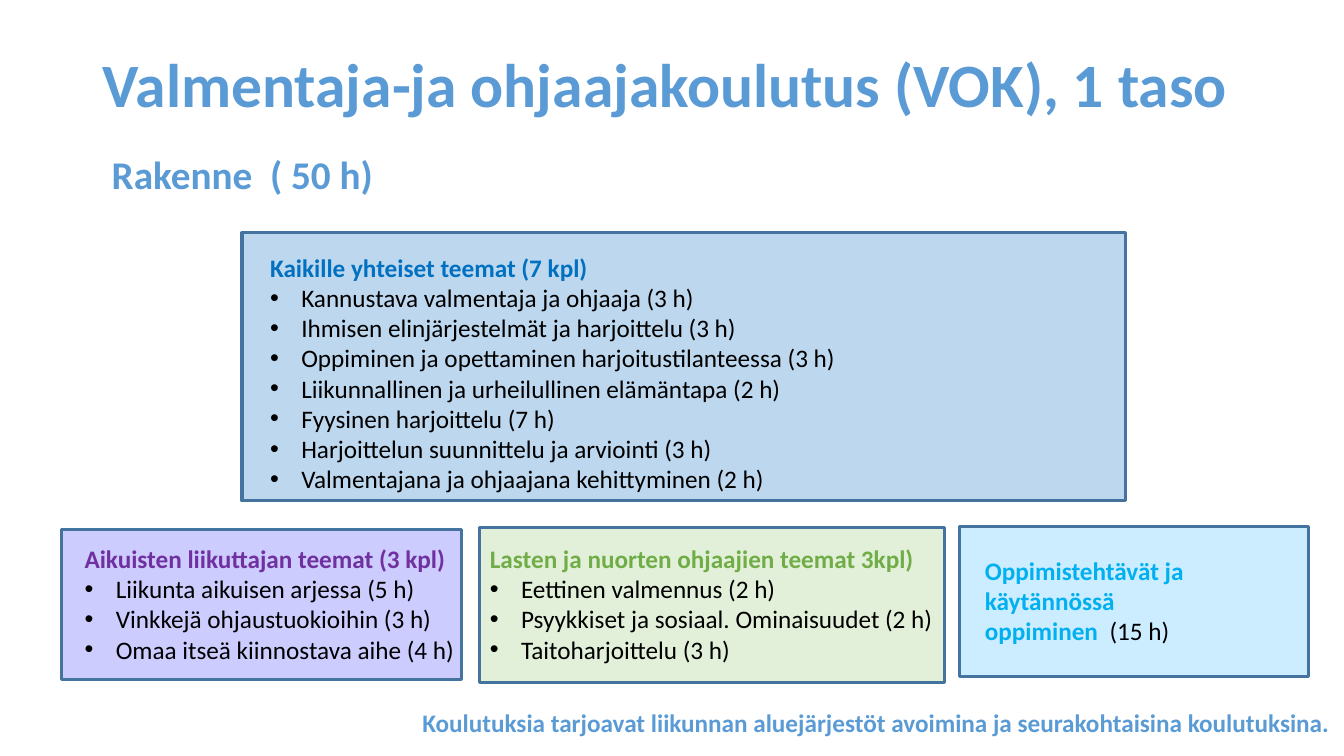
import pptx
import pptx.util
import pptx.dml.color
import pptx.enum.shapes
import pptx.enum.text
import lxml.etree

Inches = pptx.util.Inches
Pt = pptx.util.Pt

THEME = {
    "font": "Calibri",
    "title_size": 44,
    "subtitle_size": 28,
    "text_size": 18,
    "accent": "5B9BD5",
    "ink": "000000",
    "border": "43739E",
    "border_width": 2.25,
    "bullet_indent": 0.31,
}

HEADINGS = [
    {"text": "Valmentaja-ja ohjaajakoulutus (VOK), 1 taso", "at": (0.92, 0.14, 11.5, 1.45),
     "size": THEME["title_size"], "anchor": "MIDDLE",
     "format": {"line_spacing": 0.9}},
    {"text": "Rakenne  ( 50 h)", "at": (1.01, 1.49, 11.41, 0.6),
     "size": THEME["subtitle_size"], "anchor": "TOP",
     "format": {"line_spacing": 0.9, "space_before": Pt(10)}},
    {"text": "Koulutuksia tarjoavat liikunnan aluejärjestöt avoimina ja seurakohtaisina koulutuksina.",
     "at": (4.09, 6.97, 9.24, 0.4), "size": THEME["text_size"], "anchor": "TOP", "format": {}},
]

MODULES = [
    {"panel": (2.4, 2.31, 8.76, 2.66), "fill": "BDD7EE",
     "label": (2.58, 2.45, 8.48, 2.52), "color": "0070C0", "wrap": True,
     "heading": ["Kaikille yhteiset teemat (7 kpl)"],
     "themes": ["Kannustava valmentaja ja ohjaaja (3 h)",
                "Ihmisen elinjärjestelmät ja harjoittelu (3 h)",
                "Oppiminen ja opettaminen harjoitustilanteessa (3 h)",
                "Liikunnallinen ja urheilullinen elämäntapa (2 h)",
                "Fyysinen harjoittelu (7 h)",
                "Harjoittelun suunnittelu ja arviointi (3 h)",
                "Valmentajana ja ohjaajana kehittyminen (2 h)"]},
    {"panel": (0.61, 5.25, 3.97, 1.49), "fill": "CCCCFF",
     "label": (0.74, 5.34, 3.91, 1.31), "color": "7030A0", "wrap": False,
     "heading": ["Aikuisten liikuttajan teemat (3 kpl)"],
     "themes": ["Liikunta aikuisen arjessa (5 h)",
                "Vinkkejä ohjaustuokioihin (3 h)",
                "Omaa itseä kiinnostava aihe (4 h)"]},
    {"panel": (4.76, 5.23, 4.61, 1.54), "fill": "E2F0D9",
     "label": (4.76, 5.34, 4.61, 1.31), "color": "70AD47", "wrap": True,
     "heading": ["Lasten ja nuorten ohjaajien teemat 3kpl)"],
     "themes": ["Eettinen valmennus (2 h)",
                "Psyykkiset ja sosiaal. Ominaisuudet (2 h)",
                "Taitoharjoittelu (3 h)"]},
    {"panel": (9.52, 5.22, 3.46, 1.49), "fill": "CCECFF",
     "label": (9.67, 5.46, 2.37, 1.01), "color": "00B0F0", "wrap": True,
     "heading": ["Oppimistehtävät ja", "käytännössä oppiminen  "],
     "hours": "(15 h)", "themes": []},
]


def rgb(color):
    return pptx.dml.color.RGBColor.from_string(color)


def set_attributes(target, values):
    for name, value in values.items():
        setattr(target, name, value)


def add_run(paragraph, text, size, color, bold):
    run = paragraph.add_run()
    run.text = text
    set_attributes(run.font, {"name": THEME["font"], "size": Pt(size), "bold": bold})
    run.font.color.rgb = rgb(color)


def add_frame(slide, at, values):
    frame = slide.shapes.add_textbox(*map(Inches, at)).text_frame
    set_attributes(frame, values)
    return frame


def add_bullet(paragraph):
    indent = Inches(THEME["bullet_indent"])
    properties = paragraph._p.get_or_add_pPr()
    properties.set("marL", str(indent))
    properties.set("indent", str(-indent))
    for tag, attribute, value in (("a:buFont", "typeface", "Arial"), ("a:buChar", "char", "•")):
        lxml.etree.SubElement(properties, pptx.oxml.ns.qn(tag)).set(attribute, value)


def add_heading(slide, heading):
    frame = add_frame(slide, heading["at"], {
        "word_wrap": True,
        "vertical_anchor": getattr(pptx.enum.text.MSO_ANCHOR, heading["anchor"]),
    })
    paragraph = frame.paragraphs[0]
    set_attributes(paragraph, heading["format"])
    add_run(paragraph, heading["text"], heading["size"], THEME["accent"], True)


def add_panel(slide, module):
    panel = slide.shapes.add_shape(
        pptx.enum.shapes.MSO_SHAPE.RECTANGLE, *map(Inches, module["panel"]))
    panel.shadow.inherit = False
    panel.fill.solid()
    panel.fill.fore_color.rgb = rgb(module["fill"])
    panel.line.color.rgb = rgb(THEME["border"])
    panel.line.width = Pt(THEME["border_width"])


def add_label(slide, module):
    frame = add_frame(slide, module["label"], {
        "word_wrap": module["wrap"],
        "auto_size": pptx.enum.text.MSO_AUTO_SIZE.SHAPE_TO_FIT_TEXT,
    })
    size = THEME["text_size"]
    for index, line in enumerate(module["heading"]):
        paragraph = frame.add_paragraph() if index else frame.paragraphs[0]
        add_run(paragraph, line, size, module["color"], True)
    if "hours" in module:
        add_run(paragraph, module["hours"], size, THEME["ink"], False)
    for theme in module["themes"]:
        paragraph = frame.add_paragraph()
        add_bullet(paragraph)
        add_run(paragraph, theme, size, THEME["ink"], False)


def main():
    deck = pptx.Presentation()
    set_attributes(deck, {"slide_width": Inches(13.33), "slide_height": Inches(7.5)})
    slide = deck.slides.add_slide(deck.slide_layouts[6])
    for heading in HEADINGS:
        add_heading(slide, heading)
    for module in MODULES:
        add_panel(slide, module)
        add_label(slide, module)
    deck.save("out.pptx")


if __name__ == "__main__":
    main()
